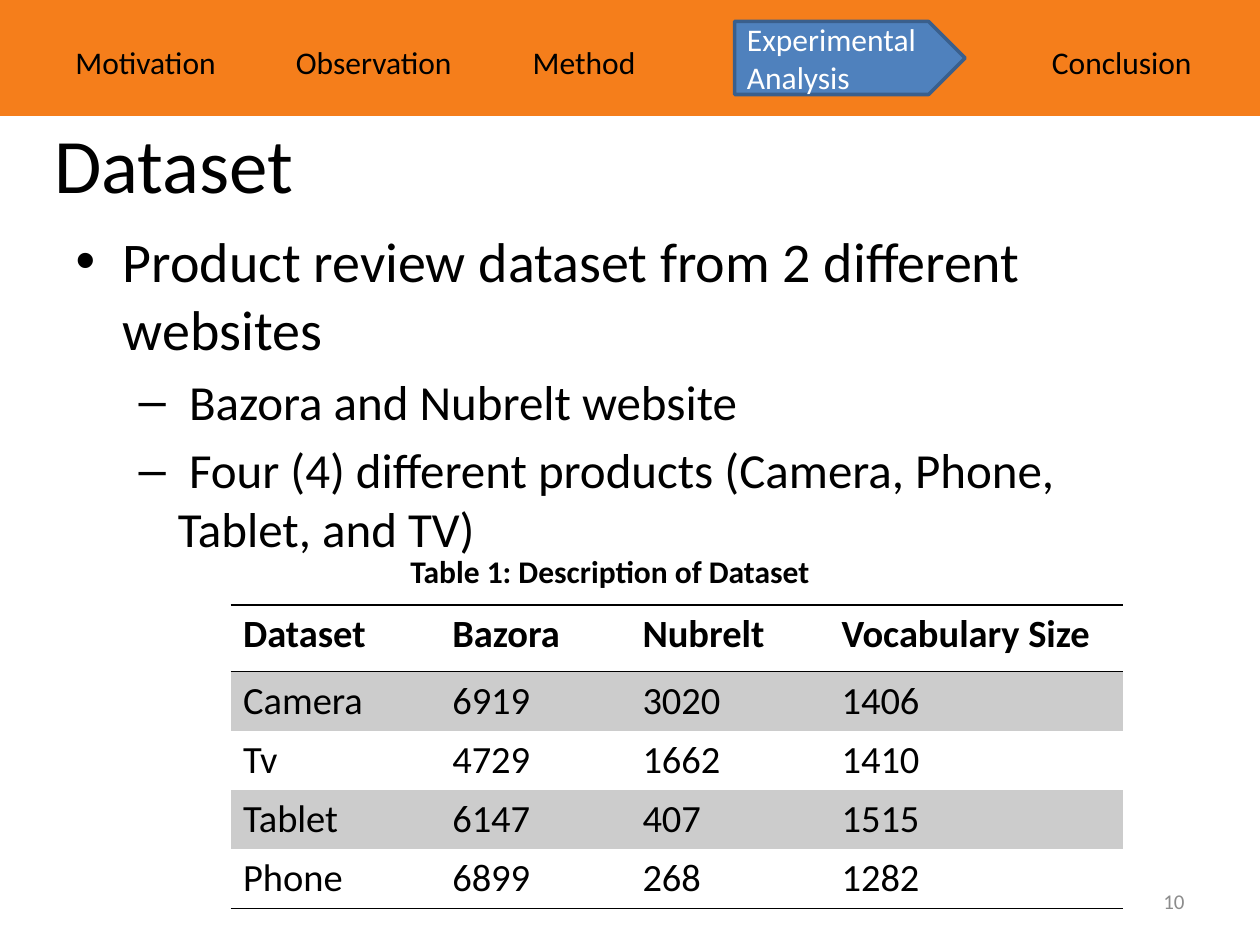
from lxml import etree
from pptx import Presentation
from pptx import util as u
from pptx.dml.color import RGBColor
from pptx.enum import shapes, text
from pptx.oxml import ns

COLORS = {
    "banner": "F57E1B",
    "arrow": "4F81BD",
    "arrow_line": "3A5F8C",
    "text": "000000",
    "arrow_text": "FFFFFF",
    "number": "8C8C8C",
    "band": "CCCCCC",
}
FONT = "Calibri"
PLAIN_TABLE_STYLE = "{2D5ABB26-0587-4C30-8999-92F81FD0307C}"

NAVIGATION = [
    ("Motivation", 0.5, 1.44),
    ("Observation", 2.25, 1.45),
    ("Method", 4.13, 1.03),
    ("Conclusion", 8.25, 1.32),
]
BULLETS = [
    (0, "Product review dataset from 2 different websites"),
    (1, " Bazora and Nubrelt website"),
    (1, " Four (4) different products (Camera, Phone, Tablet, and TV)"),
]
DATASET_ROWS = [
    ("Dataset", "Bazora", "Nubrelt", "Vocabulary Size"),
    ("Camera", "6919", "3020", "1406"),
    ("Tv", "4729", "1662", "1410"),
    ("Tablet", "6147", "407", "1515"),
    ("Phone", "6899", "268", "1282"),
]
COLUMN_WIDTHS = [1.66, 1.51, 1.58, 2.33]
HEADER_HEIGHT = 0.53
ROW_HEIGHT = 0.47


def rgb(name):
    return RGBColor.from_string(COLORS[name])


def set_attributes(target, values):
    for name, value in values.items():
        setattr(target, name, value)


def inches(*lengths):
    return [u.Inches(length) for length in lengths]


def write(paragraph, words, size, color="text", bold=False, **paragraph_format):
    paragraph.text = words
    set_attributes(paragraph, paragraph_format)
    set_attributes(
        paragraph.font, {"name": FONT, "size": u.Pt(size), "bold": bold}
    )
    paragraph.font.color.rgb = rgb(color)


def place(shape, left, top, width, height):
    bounds = inches(left, top, width, height)
    set_attributes(shape, dict(zip(("left", "top", "width", "height"), bounds)))


def fill_title(slide):
    title = slide.shapes.title
    place(title, 0.33, 0.67, 9, 1.25)
    title.text_frame.auto_size = text.MSO_AUTO_SIZE.NONE
    write(title.text_frame.paragraphs[0], "Dataset", 44,
          alignment=text.PP_ALIGN.LEFT)


def fill_body(slide):
    body = slide.placeholders[1]
    place(body, 0.5, 1.75, 9, 2.67)
    frame = body.text_frame
    frame.auto_size = text.MSO_AUTO_SIZE.NONE
    for index, (level, words) in enumerate(BULLETS):
        paragraph = frame.add_paragraph() if index else frame.paragraphs[0]
        write(paragraph, words, 28 if level else 32, level=level)
    frame.paragraphs[0].space_before = u.Pt(0)


def add_label(slide, words, bounds, size=18, color="text", bold=False,
              frame_format=None, **paragraph_format):
    frame = slide.shapes.add_textbox(*inches(*bounds)).text_frame
    set_attributes(frame, frame_format or {
        "word_wrap": False,
        "auto_size": text.MSO_AUTO_SIZE.SHAPE_TO_FIT_TEXT,
    })
    write(frame.paragraphs[0], words, size, color, bold, **paragraph_format)


def add_block(slide, kind, bounds, fill):
    shape = slide.shapes.add_shape(kind, *inches(*bounds))
    shape.shadow.inherit = False
    shape.fill.solid()
    shape.fill.fore_color.rgb = rgb(fill)
    shape.line.fill.background()
    return shape


def add_current_section(slide):
    arrow = add_block(slide, shapes.MSO_SHAPE.PENTAGON,
                      (5.83, 0.17, 1.83, 0.58), "arrow")
    arrow.line.color.rgb = rgb("arrow_line")
    arrow.line.width = u.Pt(2)
    frame = arrow.text_frame
    set_attributes(frame, {"word_wrap": True,
                           "vertical_anchor": text.MSO_ANCHOR.MIDDLE})
    frame.text = "Experimental\nAnalysis"
    for paragraph in frame.paragraphs:
        write(paragraph, paragraph.text, 18, "arrow_text",
              alignment=text.PP_ALIGN.LEFT)


def add_border(cell, side):
    properties = cell._tc.get_or_add_tcPr()
    line = etree.SubElement(properties, ns.qn(f"a:{side}"), w=str(u.Pt(1)))
    fill = etree.SubElement(line, ns.qn("a:solidFill"))
    etree.SubElement(fill, ns.qn("a:srgbClr"), val=COLORS["text"])


def format_cell(cell, words, row):
    is_header = row == 0
    write(cell.text_frame.paragraphs[0], words, 22, bold=is_header)
    if is_header:
        add_border(cell, "lnT")
    if is_header or row == len(DATASET_ROWS) - 1:
        add_border(cell, "lnB")
    if row % 2:
        cell.fill.solid()
        cell.fill.fore_color.rgb = rgb("band")
    else:
        cell.fill.background()


def add_dataset_table(slide):
    heights = [HEADER_HEIGHT] + [ROW_HEIGHT] * (len(DATASET_ROWS) - 1)
    frame = slide.shapes.add_table(
        len(heights), len(COLUMN_WIDTHS),
        *inches(1.83, 4.8, sum(COLUMN_WIDTHS), sum(heights))
    )
    table = frame.table
    set_attributes(table, {"first_row": False, "horz_banding": False})
    table._tbl.tblPr.find(ns.qn("a:tableStyleId")).text = PLAIN_TABLE_STYLE
    for column, width in zip(table.columns, COLUMN_WIDTHS):
        column.width = u.Inches(width)
    for row, (words_in_row, height) in enumerate(zip(DATASET_ROWS, heights)):
        table.rows[row].height = u.Inches(height)
        for column, words in enumerate(words_in_row):
            format_cell(table.cell(row, column), words, row)


def main():
    presentation = Presentation()
    set_attributes(presentation, {"slide_width": u.Inches(10),
                                  "slide_height": u.Inches(7.5)})
    slide = presentation.slides.add_slide(presentation.slide_layouts[1])
    fill_title(slide)
    fill_body(slide)
    add_label(slide, "10", (7.17, 6.95, 2.33, 0.4), 12, "number",
              frame_format={"word_wrap": True,
                            "vertical_anchor": text.MSO_ANCHOR.MIDDLE},
              alignment=text.PP_ALIGN.RIGHT)
    add_dataset_table(slide)
    add_label(slide, "Table 1: Description of Dataset",
              (3.16, 4.33, 3.4, 0.4), bold=True)
    add_block(slide, shapes.MSO_SHAPE.RECTANGLE, (0, 0, 10, 0.92), "banner")
    for words, left, width in NAVIGATION:
        add_label(slide, words, (left, 0.08, width, 0.55), line_spacing=1.7)
    add_current_section(slide)
    presentation.save("out.pptx")


if __name__ == "__main__":
    main()
